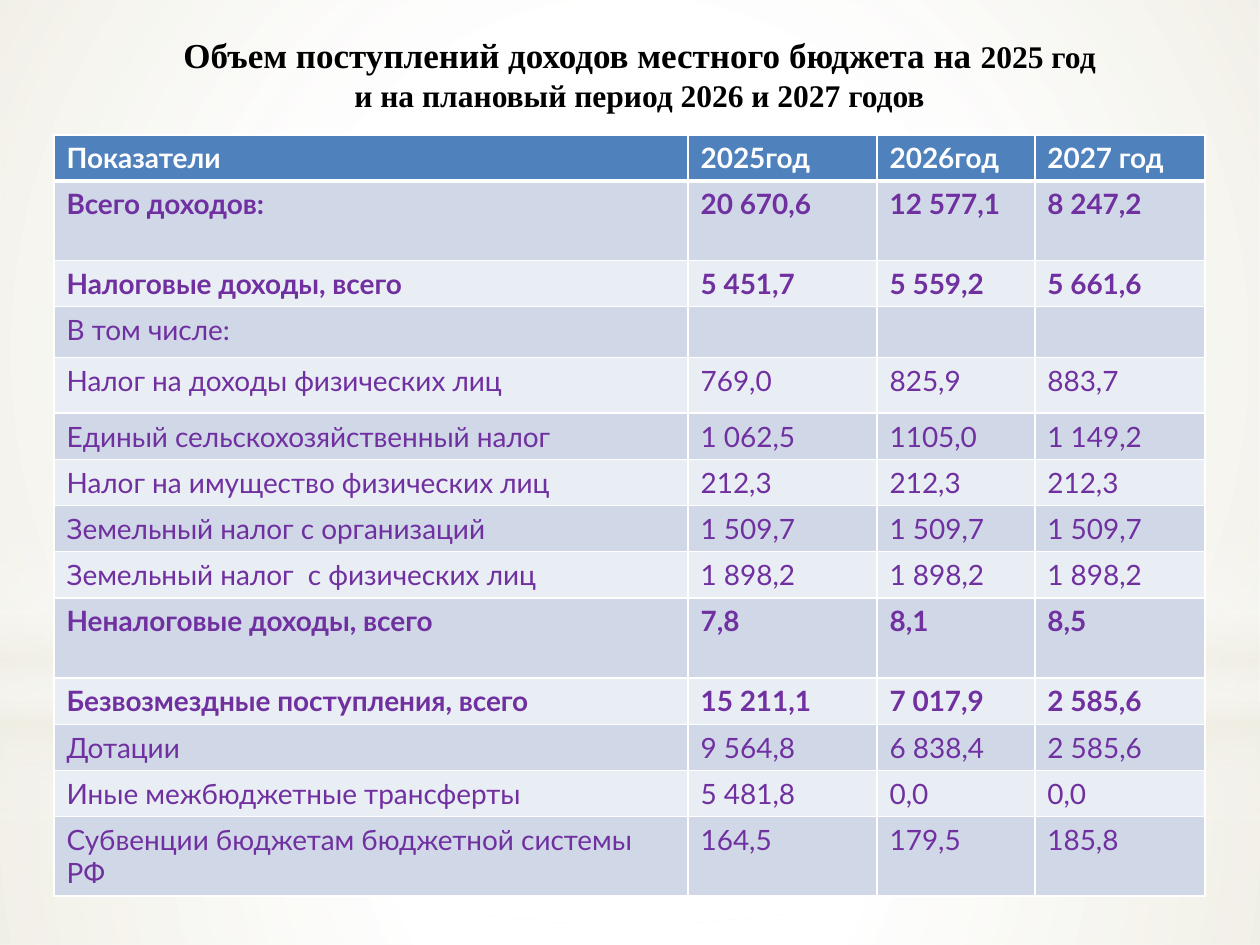
from lxml import etree
from pptx import Presentation
from pptx.dml.color import RGBColor
from pptx.enum.shapes import MSO_SHAPE
from pptx.enum.text import MSO_ANCHOR, MSO_AUTO_SIZE, PP_ALIGN
from pptx.oxml import parse_xml
from pptx.oxml.ns import nsdecls, qn
from pptx.util import Cm, Pt

RECT, OVAL = MSO_SHAPE.RECTANGLE, MSO_SHAPE.OVAL
MIDDLE, CENTER = MSO_ANCHOR.MIDDLE, PP_ALIGN.CENTER
GROW = MSO_AUTO_SIZE.SHAPE_TO_FIT_TEXT

WHITE = RGBColor(0xFF, 0xFF, 0xFF)
BLACK = RGBColor(0x00, 0x00, 0x00)
CREAM = RGBColor(0xEE, 0xEC, 0xE1)
BLUE = RGBColor(0x4F, 0x81, 0xBD)
PURPLE = RGBColor(0x70, 0x30, 0xA0)
DARK = RGBColor(0xD0, 0xD8, 0xE8)
LIGHT = RGBColor(0xE9, 0xED, 0xF4)

RADIAL = ('<a:path path="circle">'
          '<a:fillToRect l="50000" t="50000" r="50000" b="50000"/></a:path>')
LINEAR = '<a:lin ang="5400000" scaled="0"/>'

# Preset, top, height, direction, stops of (position, colour, opacity)
GLOWS = [
    (RECT, 14.17, 4.88, RADIAL,
     [(0, WHITE, 91), (37, WHITE, 76), (100, CREAM, 79)]),
    (RECT, 0, 14.17, RADIAL,
     [(0, WHITE, 89), (48, WHITE, 62), (100, CREAM, 79)]),
    (RECT, 10.46, 6.35, LINEAR,
     [(0, WHITE, 0), (29, WHITE, 30), (45, CREAM, 40),
      (55, WHITE, 26), (65, CREAM, 60), (100, WHITE, 0)]),
    (OVAL, 4.45, 14.17, RADIAL, [(0, WHITE, 100), (56, WHITE, 0)]),
]

TITLE = [
    [("Объем поступлений доходов местного бюджета на ", 20),
     ("2025 год", 18)],
    [("и на плановый период 2026 и 2027 годов", 18)],
]

WIDTHS = [12.78, 3.81, 3.18, 3.43]
LOW = 0.93
# Row height, bold, cell texts
ROWS = [
    (LOW, True, ["Показатели", "2025год", "2026год", "2027 год"]),
    (1.6, True, ["Всего доходов:", "20 670,6", "12 577,1", "8 247,2"]),
    (LOW, True, ["Налоговые доходы, всего", "5 451,7", "5 559,2", "5 661,6"]),
    (1.01, False, ["В том числе:", "", "", ""]),
    (1.12, False, ["Налог на доходы физических лиц",
                   "769,0", "825,9", "883,7"]),
    (LOW, False, ["Единый сельскохозяйственный налог",
                  "1 062,5", "1105,0", "1 149,2"]),
    (LOW, False, ["Налог на имущество физических лиц",
                  "212,3", "212,3", "212,3"]),
    (LOW, False, ["Земельный налог с организаций",
                  "1 509,7", "1 509,7", "1 509,7"]),
    (LOW, False, ["Земельный налог  с физических лиц",
                  "1 898,2", "1 898,2", "1 898,2"]),
    (1.62, True, ["Неналоговые доходы, всего", "7,8", "8,1", "8,5"]),
    (LOW, True, ["Безвозмездные поступления, всего",
                 "15 211,1", "7 017,9", "2 585,6"]),
    (LOW, False, ["Дотации", "9 564,8", "6 838,4", "2 585,6"]),
    (LOW, False, ["Иные межбюджетные трансферты", "5 481,8", "0,0", "0,0"]),
    (1.24, False, ["Субвенции бюджетам бюджетной системы РФ",
                   "164,5", "179,5", "185,8"]),
]


def add_run(para, text, face, size, color, bold):
    run = para.add_run()
    run.text = text
    font = run.font
    font.name, font.size, font.bold = face, Pt(size), bold
    font.color.rgb = color


def add_glow(slide, preset, top, height, course, stops):
    """Add a full-width shape with a see-through gradient."""
    shape = slide.shapes.add_shape(preset, 0, Cm(top), Cm(25.4), Cm(height))
    shape.shadow.inherit = False
    shape.line.fill.background()
    shape.fill.background()
    marks = "".join(
        f'<a:gs pos="{pos * 1000}"><a:srgbClr val="{color}">'
        f'<a:alpha val="{alpha * 1000}"/></a:srgbClr></a:gs>'
        for pos, color, alpha in stops)
    grad = parse_xml(f'<a:gradFill {nsdecls("a")} rotWithShape="1">'
                     f'<a:gsLst>{marks}</a:gsLst>{course}</a:gradFill>')
    props = shape.element.spPr
    props.replace(props.find(qn("a:noFill")), grad)


def add_title(slide):
    box = slide.shapes.add_textbox(Cm(2.29), Cm(0.33), Cm(21.21), Cm(2.31))
    frame = box.text_frame
    frame.word_wrap = True
    frame.auto_size = GROW
    frame.vertical_anchor = MIDDLE
    for num, line in enumerate(TITLE):
        para = frame.add_paragraph() if num else frame.paragraphs[0]
        para.alignment = CENTER
        for text, size in line:
            add_run(para, text, "Times New Roman", size, BLACK, True)


def set_edges(cell, top, bottom):
    """Draw white borders; top and bottom are widths in points."""
    props = cell._tc.get_or_add_tcPr()
    for side, width in (("L", 1), ("R", 1), ("T", top), ("B", bottom)):
        edge = etree.SubElement(props, qn(f"a:ln{side}"), w=str(Pt(width)))
        fill = etree.SubElement(edge, qn("a:solidFill"))
        etree.SubElement(fill, qn("a:srgbClr"), val=str(WHITE))


def add_budget(slide):
    table = slide.shapes.add_table(
        len(ROWS), len(WIDTHS), Cm(1.09), Cm(2.72),
        Cm(sum(WIDTHS)), Cm(sum(row[0] for row in ROWS))).table
    for col, width in zip(table.columns, WIDTHS):
        col.width = Cm(width)
    for num, (height, bold, texts) in enumerate(ROWS):
        table.rows[num].height = Cm(height)
        back = (DARK if num % 2 else LIGHT) if num else BLUE
        color = PURPLE if num else WHITE
        for cell, text in zip(table.rows[num].cells, texts):
            set_edges(cell, 3 if num == 1 else 1, 1 if num else 3)
            cell.fill.solid()
            cell.fill.fore_color.rgb = back
            if text:
                para = cell.text_frame.paragraphs[0]
                add_run(para, text, "Lato", 16, color, bold)


def main():
    deck = Presentation()
    deck.slide_width, deck.slide_height = Cm(25.4), Cm(19.05)
    slide = deck.slides.add_slide(deck.slide_layouts[6])
    slide.background.fill.solid()
    slide.background.fill.fore_color.rgb = WHITE
    for glow in GLOWS:
        add_glow(slide, *glow)
    add_budget(slide)
    add_title(slide)
    deck.save("out.pptx")


if __name__ == "__main__":
    main()
